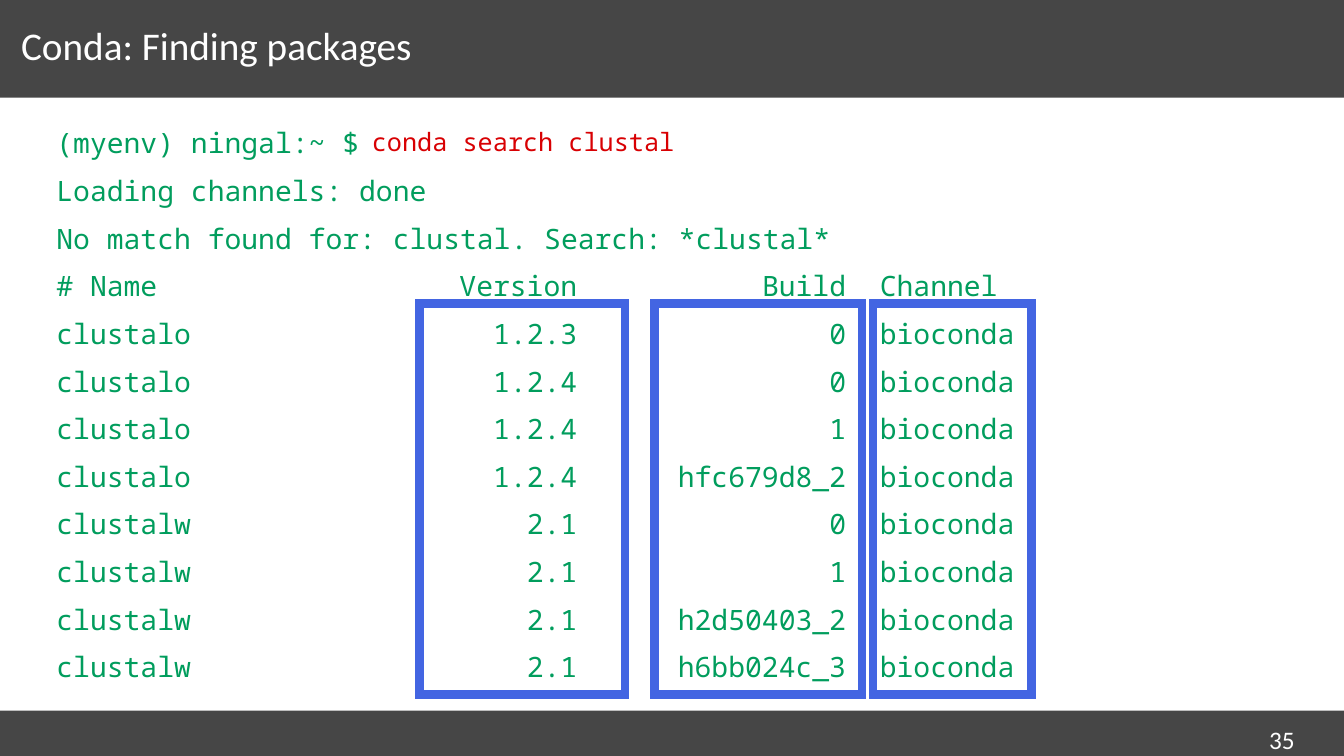
"""Build the slide that shows how to find packages with conda."""
from dataclasses import dataclass

from lxml.etree import SubElement
from pptx import Presentation
from pptx.dml.color import RGBColor
from pptx.enum.shapes import MSO_SHAPE as Shape
from pptx.enum.text import MSO_ANCHOR as Anchor, MSO_AUTO_SIZE as AutoSize, PP_ALIGN as Align
from pptx.oxml.ns import qn
from pptx.util import Inches, Pt

CHARCOAL = RGBColor(0x46, 0x46, 0x46)
WHITE = RGBColor(0xFF, 0xFF, 0xFF)
GREEN = RGBColor(0x01, 0x9D, 0x5D)
RED = RGBColor(0xD8, 0x00, 0x03)
BLUE = RGBColor(0x43, 0x65, 0xE2)
SANS = "Calibri"
MONO = "Noto Sans Mono"
WIDTH, HEIGHT = 13.33, 7.5
CHARACTER = 1 / 6
TAB_STOPS = ((31, "r"), (47, "r"), (49, "l"))


@dataclass(frozen=True)
class Box:
    left: float
    top: float
    width: float
    height: float

    def lengths(self) -> tuple:
        return tuple(Inches(n) for n in (self.left, self.top, self.width, self.height))


@dataclass(frozen=True)
class Package:
    name: str
    version: str
    build: str
    channel: str = "bioconda"

    def line(self) -> str:
        return "\t".join((self.name, self.version, self.build, self.channel))


BANDS = (Box(0, 7.05, WIDTH, 0.45), Box(0, 0, WIDTH, 0.97))
HIGHLIGHTS = tuple(Box(left, 3.01, width, 3.88)
                   for left, width in ((4.16, 2.04), (6.49, 2.06), (8.66, 1.57)))
MESSAGES = ("(myenv) ningal:~ $", "Loading channels: done",
            "No match found for: clustal. Search: *clustal*")
PACKAGES = (
    Package("# Name", "Version", "Build", "Channel"),
    Package("clustalo", "1.2.3", "0"),
    Package("clustalo", "1.2.4", "0"),
    Package("clustalo", "1.2.4", "1"),
    Package("clustalo", "1.2.4", "hfc679d8_2"),
    Package("clustalw", "2.1", "0"),
    Package("clustalw", "2.1", "1"),
    Package("clustalw", "2.1", "h2d50403_2"),
    Package("clustalw", "2.1", "h6bb024c_3"),
)


def write(shape, *lines: str, font: str, size: float, color: RGBColor,
          inset: float = 0.1, anchor=Anchor.TOP, spacing: float = 1.0,
          before: float = 0, after: float = 0, tabs: tuple = ()) -> None:
    frame = shape.text_frame
    frame.word_wrap = True
    frame.auto_size = AutoSize.NONE
    frame.vertical_anchor = anchor
    frame.margin_left = frame.margin_right = Inches(inset)
    frame.margin_top = frame.margin_bottom = Inches(0.05)
    for index, line in enumerate(lines):
        paragraph = frame.add_paragraph() if index else frame.paragraphs[0]
        paragraph.alignment = Align.LEFT
        paragraph.line_spacing = spacing
        paragraph.space_before = Pt(before if index else 0)
        paragraph.space_after = Pt(after)
        if tabs and "\t" in line:
            tab_list = SubElement(paragraph._p.get_or_add_pPr(), qn("a:tabLst"))
            for column, side in tabs:
                SubElement(tab_list, qn("a:tab"), pos=str(Inches(column * CHARACTER)), algn=side)
        run = paragraph.add_run()
        run.text = line
        run.font.name = font
        run.font.size = Pt(size)
        run.font.color.rgb = color


def add_text(slide, box: Box, *lines: str, **text_format) -> None:
    write(slide.shapes.add_textbox(*box.lengths()), *lines, **text_format)


def add_rectangle(slide, box: Box):
    shape = slide.shapes.add_shape(Shape.RECTANGLE, *box.lengths())
    shape.shadow.inherit = False
    return shape


def add_band(slide, box: Box) -> None:
    shape = add_rectangle(slide, box)
    shape.fill.solid()
    shape.fill.fore_color.rgb = CHARCOAL
    shape.line.fill.background()
    slide.shapes.element.insert(2, shape.element)


def add_highlight(slide, box: Box) -> None:
    shape = add_rectangle(slide, box)
    shape.fill.background()
    shape.line.color.rgb = BLUE
    shape.line.width = Pt(6)
    SubElement(shape.line._ln, qn("a:miter"), lim="800000")


def main() -> None:
    presentation = Presentation()
    presentation.slide_width = Inches(WIDTH)
    presentation.slide_height = Inches(HEIGHT)
    slide = presentation.slides.add_slide(presentation.slide_layouts[5])
    for band in BANDS:
        add_band(slide, band)
    title = slide.shapes.title
    title.left, title.top, title.width, title.height = Box(0.21, 0.17, 11.52, 0.64).lengths()
    write(title, "Conda: Finding packages", font=SANS, size=28, color=WHITE,
          inset=0, anchor=Anchor.MIDDLE, spacing=0.8)
    add_text(slide, Box(0.56, 1.2, 12.2, 5.67), *MESSAGES,
             *(package.line() for package in PACKAGES), font=MONO, size=20,
             color=GREEN, inset=0, before=6, after=4, tabs=TAB_STOPS)
    add_text(slide, Box(12.49, 7.14, 0.7, 0.25), "35", font=SANS, size=18, color=WHITE)
    for highlight in HIGHLIGHTS:
        add_highlight(slide, highlight)
    add_text(slide, Box(3.59, 1.2, 3.93, 0.4), "conda search clustal",
             font=MONO, size=18, color=RED)
    presentation.save("out.pptx")


if __name__ == "__main__":
    main()
